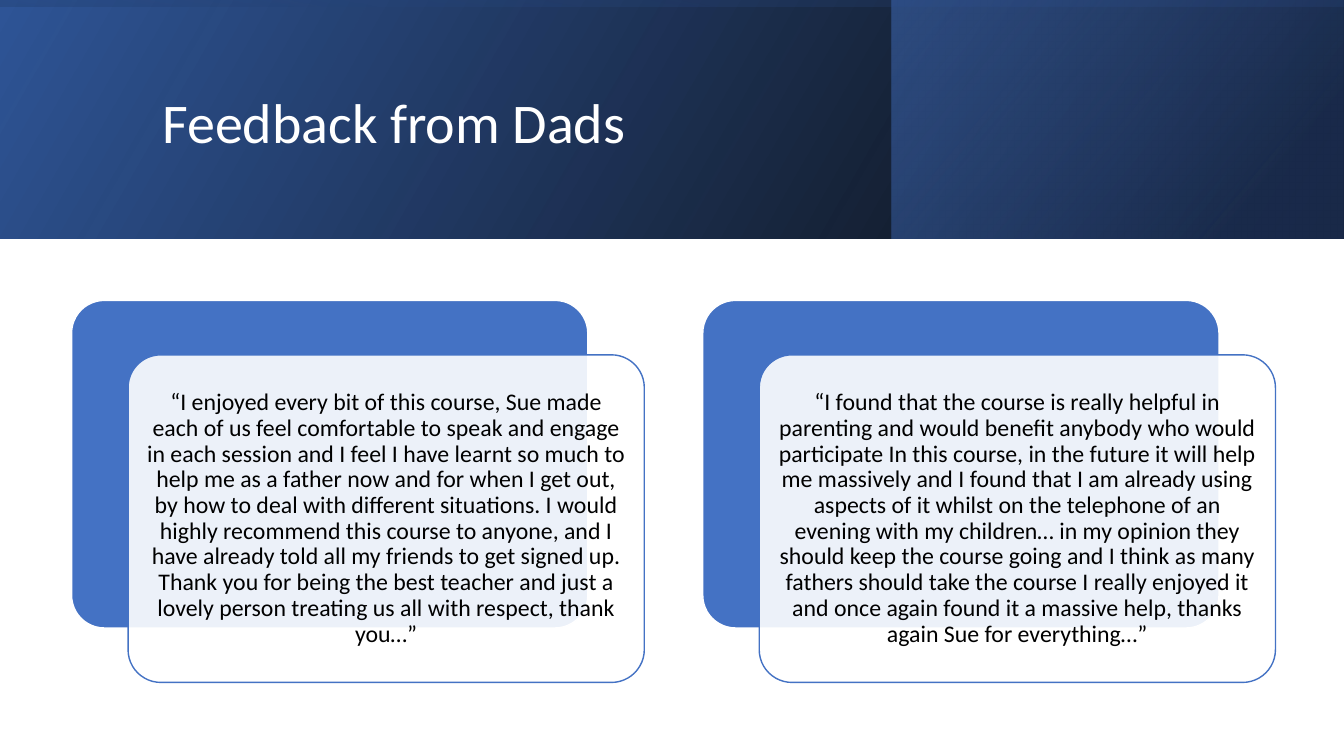
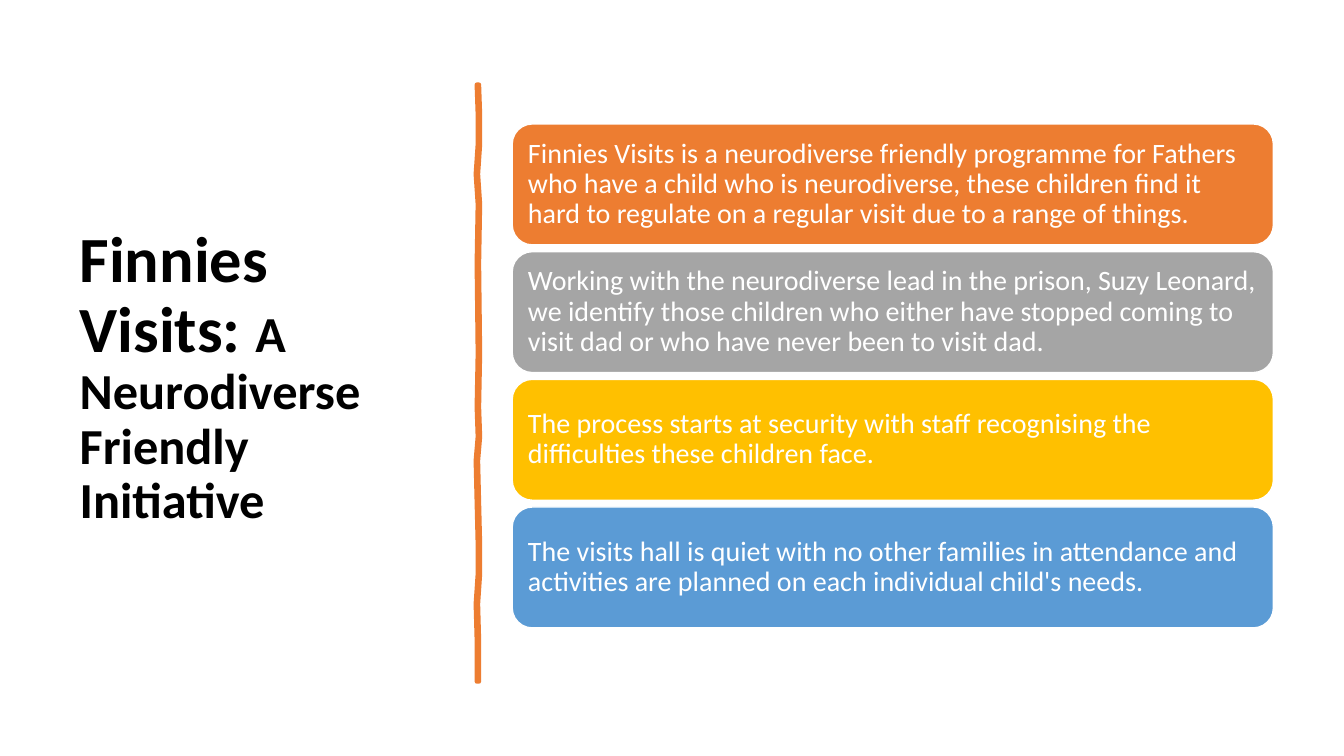
import pptx
import pptx.util
import pptx.dml.color
import pptx.enum.shapes
import pptx.enum.text
import pptx.oxml
import pptx.oxml.ns
import lxml.etree

Inches, Pt = pptx.util.Inches, pptx.util.Pt
RGB = pptx.dml.color.RGBColor
SHAPES = pptx.enum.shapes.MSO_SHAPE
ALIGN = pptx.enum.text.PP_ALIGN

FONT = "Calibri"
WHITE, BLACK = RGB(0xFF, 0xFF, 0xFF), RGB(0, 0, 0)
BLUE, DEEP_BLUE, NAVY = RGB(0x44, 0x72, 0xC4), RGB(0x2F, 0x55, 0x97), RGB(0x20, 0x38, 0x64)
ORANGE, GREY = RGB(0xED, 0x7D, 0x31), RGB(0xA5, 0xA5, 0xA5)
GOLD, SKY = RGB(0xFF, 0xC0, 0x00), RGB(0x5B, 0x9B, 0xD5)
SLIDE_W, SLIDE_H = 13.33, 7.5

# Content
FEEDBACK_TITLE = [("Feedback from Dads", 40, False)]
QUOTES = [
    "“I enjoyed every bit of this course, Sue made each of us feel comfortable to speak and "
    "engage in each session and I feel I have learnt so much to help me as a father now and for "
    "when I get out, by how to deal with different situations. I would highly recommend this "
    "course to anyone, and I have already told all my friends to get signed up. Thank you for "
    "being the best teacher and just a lovely person treating us all with respect, thank you…”",
    "“I found that the course is really helpful in parenting and would benefit anybody who would "
    "participate In this course, in the future it will help me massively and I found that I am "
    "already using aspects of it whilst on the telephone of an evening with my children… in my "
    "opinion they should keep the course going and I think as many fathers should take the "
    "course I really enjoyed it and once again found it a massive help, thanks again Sue for "
    "everything…”",
]
VISITS_TITLE = [("Finnies Visits: ", 46, True), ("A Neurodiverse Friendly Initiative", 36, True)]
VISIT_POINTS = [
    (ORANGE, "Finnies Visits is a neurodiverse friendly programme for Fathers who have a child "
             "who is neurodiverse, these children find it hard to regulate on a regular visit "
             "due to a range of things."),
    (GREY, "Working with the neurodiverse lead in the prison, Suzy Leonard, we identify those "
           "children who either have stopped coming to visit dad or who have never been to "
           "visit dad."),
    (GOLD, "The process starts at security with staff recognising the difficulties these "
           "children face."),
    (SKY, "The visits hall is quiet with no other families in attendance and activities are "
          "planned on each individual child's needs."),
]

# Header bands: box, rotation, angle, stops of (position, colour, opacity) in percent
BAND_H = 2.37
BANDS = [
    ((0, 0, SLIDE_W, BAND_H), 0, 330, [(0, BLACK, 96), (100, DEEP_BLUE, 100)]),
    ((8.84, 0, SLIDE_W - 8.85, BAND_H), 0, 320, [(19, NAVY, 68), (100, BLUE, 48)]),
    (((SLIDE_W - BAND_H) / 2, (BAND_H - SLIDE_W) / 2, BAND_H, SLIDE_W), 270, 350,
     [(23, DEEP_BLUE, 16), (99, BLACK, 45)]),
]

# Hand-drawn divider: (share of the height, sideways drift in inches)
DIVIDER_X, DIVIDER_TOP, DIVIDER_H, DIVIDER_W = 4.73, 0.84, 5.92, 0.02
DRIFT = [(0, 0), (0.05, 0.01), (0.1, 0.01), (0.15, -0.01), (0.2, 0.01), (0.3, 0),
         (0.45, 0.01), (0.54, 0), (0.59, 0.01), (0.63, -0.01), (0.7, 0),
         (0.77, 0.01), (0.82, 0.01), (0.87, -0.01), (0.93, 0), (1, 0)]


def add_box(slide, kind, box, fill=None, line=None):
    shape = slide.shapes.add_shape(kind, *map(Inches, box))
    shape.shadow.inherit = False
    if fill is not None:
        shape.fill.solid()
        shape.fill.fore_color.rgb = fill
    if line is None:
        shape.line.fill.background()
    else:
        shape.line.color.rgb = line
        shape.line.width = Pt(1)
    return shape


def set_opacity(colour_element, percent):
    alpha = lxml.etree.SubElement(colour_element, pptx.oxml.ns.qn("a:alpha"))
    alpha.set("val", str(percent * 1000))


def add_band(slide, box, rotation, angle, stops):
    band = add_box(slide, SHAPES.RECTANGLE, box)
    band.rotation = rotation
    properties = band.element.spPr
    properties.find(pptx.oxml.ns.qn("a:xfrm")).set("flipH", "1")
    gradient = pptx.oxml.parse_xml(
        f'<a:gradFill {pptx.oxml.ns.nsdecls("a")} rotWithShape="1"><a:gsLst/>'
        f'<a:lin ang="{angle * 60000}" scaled="0"/></a:gradFill>')
    for position, colour, opacity in stops:
        stop = lxml.etree.SubElement(gradient[0], pptx.oxml.ns.qn("a:gs"))
        stop.set("pos", str(position * 1000))
        value = lxml.etree.SubElement(stop, pptx.oxml.ns.qn("a:srgbClr"))
        value.set("val", str(colour))
        set_opacity(value, opacity)
    properties.find(pptx.oxml.ns.qn("a:prstGeom")).addnext(gradient)


def write(shape, runs, colour, align=ALIGN.LEFT, inset=0.1):
    frame = shape.text_frame
    frame.word_wrap = True
    frame.auto_size = pptx.enum.text.MSO_AUTO_SIZE.NONE
    frame.vertical_anchor = pptx.enum.text.MSO_ANCHOR.MIDDLE
    frame.margin_left = frame.margin_right = Inches(inset)
    frame.margin_top = frame.margin_bottom = Inches(0.08)
    paragraph = frame.paragraphs[0]
    paragraph.alignment = align
    paragraph.line_spacing = 0.9
    for text, size, bold in runs:
        run = paragraph.add_run()
        run.text = text
        run.font.name, run.font.size, run.font.bold = FONT, Pt(size), bold
        run.font.color.rgb = colour


def set_title(slide, box, runs, colour):
    title = slide.shapes.title
    title.left, title.top, title.width, title.height = map(Inches, box)
    write(title, runs, colour)
    slide.shapes.element.append(title.element)  # in front of what is already drawn


def add_divider(slide):
    left = [(DIVIDER_X + drift, DIVIDER_TOP + share * DIVIDER_H) for share, drift in DRIFT]
    right = [(x + DIVIDER_W, y) for x, y in reversed(left)]
    outline = [(Inches(x), Inches(y)) for x, y in left + right]
    builder = slide.shapes.build_freeform(*outline[0])
    builder.add_line_segments(outline[1:], close=True)
    divider = builder.convert_to_shape()
    divider.shadow.inherit = False
    divider.fill.solid()
    divider.fill.fore_color.rgb = ORANGE
    divider.line.color.rgb = ORANGE
    divider.line.width = Pt(3.25)


def build_feedback(slide):
    for band in BANDS:
        add_band(slide, *band)
    set_title(slide, (1.51, 0.38, 10.63, 1.72), FEEDBACK_TITLE, WHITE)
    # Each quote card lies over a blue card, shifted down and right
    left, top, width, height, pitch = 0.71, 2.98, 5.12, 3.25, 6.26
    for column, quote in enumerate(QUOTES):
        x = left + column * pitch
        back = add_box(slide, SHAPES.ROUNDED_RECTANGLE, (x, top, width, height), BLUE, WHITE)
        card = add_box(slide, SHAPES.ROUNDED_RECTANGLE,
                       (x + 0.56, top + 0.54, width, height), WHITE, BLUE)
        back.adjustments[0] = card.adjustments[0] = 0.1
        set_opacity(card.element.spPr.find(pptx.oxml.ns.qn("a:solidFill"))[0], 90)
        write(card, [(quote, 17, False)], BLACK, ALIGN.CENTER, 0.09)


def build_visits(slide):
    set_title(slide, (0.69, 0.7, 3.74, 6.11), VISITS_TITLE, BLACK)
    add_divider(slide)
    left, top, width, height, bottom = 5.08, 1.23, 7.55, 1.2, 6.23
    pitch = (bottom - top - height) / (len(VISIT_POINTS) - 1)
    for row, (colour, point) in enumerate(VISIT_POINTS):
        bar = add_box(slide, SHAPES.ROUNDED_RECTANGLE,
                      (left, top + row * pitch, width, height), colour, WHITE)
        write(bar, [(point, 20, False)], WHITE)


def main():
    deck = pptx.Presentation()
    deck.slide_width, deck.slide_height = Inches(SLIDE_W), Inches(SLIDE_H)
    title_only = deck.slide_layouts[5]
    for build in (build_feedback, build_visits):
        build(deck.slides.add_slide(title_only))
    deck.save("out.pptx")


if __name__ == "__main__":
    main()
